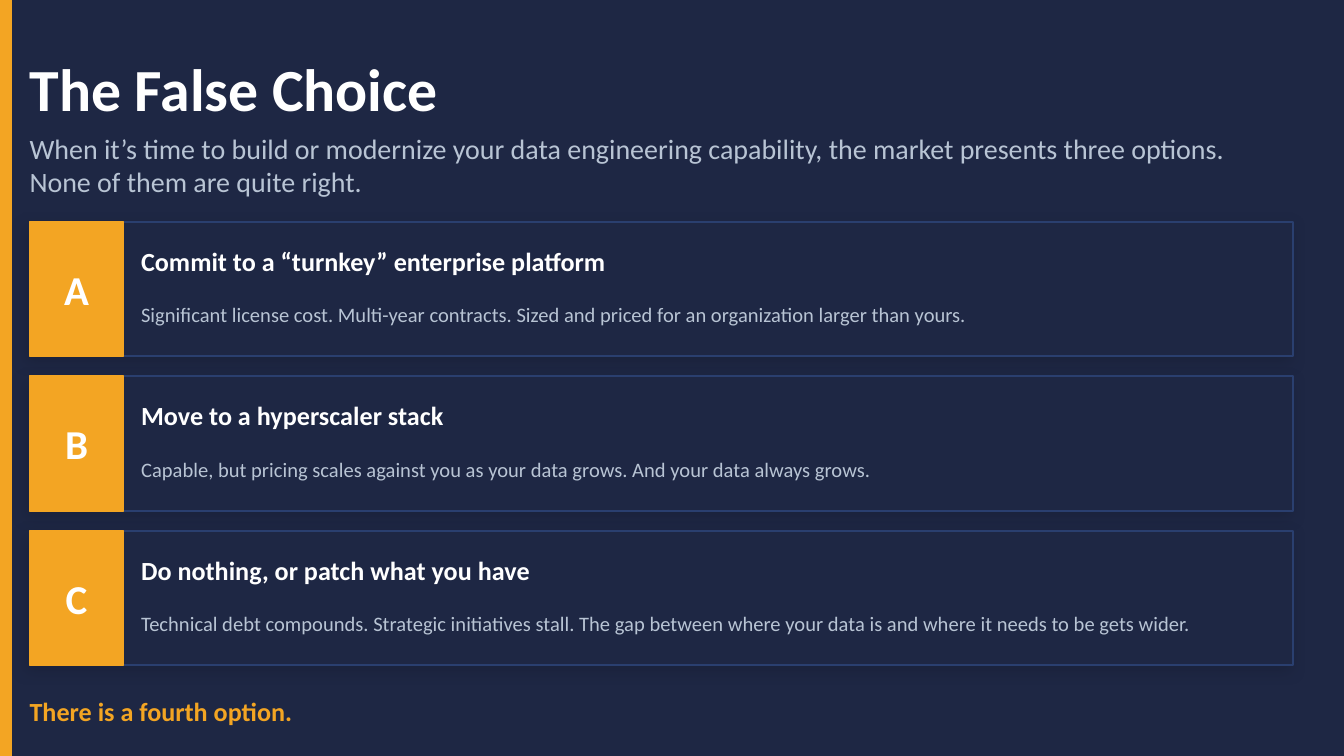
from dataclasses import dataclass

from pptx import Presentation
from pptx.dml.color import RGBColor
from pptx.enum.shapes import MSO_SHAPE
from pptx.enum.text import MSO_ANCHOR, MSO_AUTO_SIZE, PP_ALIGN
from pptx.oxml import parse_xml
from pptx.oxml.ns import nsdecls, qn
from pptx.shapes.autoshape import Shape
from pptx.slide import Slide
from pptx.util import Emu, Pt

RECT = MSO_SHAPE.RECTANGLE
MIDDLE = MSO_ANCHOR.MIDDLE
NO_FIT = MSO_AUTO_SIZE.NONE
LEFT, CENTER = PP_ALIGN.LEFT, PP_ALIGN.CENTER
TITLE_ONLY = 5
EMU_PER_PX = 4572  # 200 px to the inch


@dataclass(frozen=True)
class TextStyle:
    size: int
    color: str
    bold: bool = False


@dataclass(frozen=True)
class Theme:
    font: str = "Calibri"
    navy: str = "1E2744"
    amber: str = "F3A523"
    border: str = "2A3F6F"
    title: TextStyle = TextStyle(32, "FFFFFF", True)
    lede: TextStyle = TextStyle(15, "B8C4D4")
    letter: TextStyle = TextStyle(22, "FFFFFF", True)
    heading: TextStyle = TextStyle(14, "FFFFFF", True)
    detail: TextStyle = TextStyle(11, "B8C4D4")
    closing: TextStyle = TextStyle(14, "F3A523", True)


@dataclass(frozen=True)
class Box:
    left: int
    top: int
    width: int
    height: int

    def emu(self) -> tuple[Emu, ...]:
        return tuple(Emu(px * EMU_PER_PX)
                     for px in (self.left, self.top, self.width, self.height))


@dataclass(frozen=True)
class Option:
    letter: str
    heading: str
    detail: str


THEME = Theme()
SLIDE = Box(0, 0, 2000, 1125)
MARGIN = 44
CARD_TOP, CARD_WIDTH, CARD_HEIGHT, CARD_GAP = 330, 1880, 200, 30
BADGE_WIDTH = 140
TEXT_LEFT, LINE_HEIGHT = 210, 76

OPTIONS = (
    Option("A", "Commit to a “turnkey” enterprise platform",
           "Significant license cost. Multi-year contracts. "
           "Sized and priced for an organization larger than yours."),
    Option("B", "Move to a hyperscaler stack",
           "Capable, but pricing scales against you as your data grows. "
           "And your data always grows."),
    Option("C", "Do nothing, or patch what you have",
           "Technical debt compounds. Strategic initiatives stall. "
           "The gap between where your data is and where it needs to be gets wider."),
)


def write(shape: Shape, text: str, style: TextStyle, align: PP_ALIGN = LEFT) -> None:
    frame = shape.text_frame
    frame.text = text
    frame.word_wrap = True
    frame.auto_size = NO_FIT
    frame.vertical_anchor = MIDDLE
    frame.margin_left = frame.margin_top = frame.margin_right = frame.margin_bottom = 0
    paragraph = frame.paragraphs[0]
    paragraph.alignment = align
    font = paragraph.runs[0].font
    font.name = THEME.font
    font.size = Pt(style.size)
    font.bold = style.bold
    font.color.rgb = RGBColor.from_string(style.color)


def add_text(slide: Slide, box: Box, text: str, style: TextStyle) -> None:
    write(slide.shapes.add_textbox(*box.emu()), text, style)


def add_rect(slide: Slide, box: Box, fill: str, line: str) -> Shape:
    rect = slide.shapes.add_shape(RECT, *box.emu())
    rect.shadow.inherit = False
    rect.fill.solid()
    rect.fill.fore_color.rgb = RGBColor.from_string(fill)
    rect.line.color.rgb = RGBColor.from_string(line)
    rect.line.width = Pt(1)
    return rect


def add_soft_shadow(shape: Shape) -> None:
    effects = shape.element.spPr.find(qn("a:effectLst"))
    effects.append(parse_xml(
        f'<a:outerShdw {nsdecls("a")} blurRad="{Pt(8)}" dist="{Pt(3)}" '
        f'dir="{135 * 60000}" algn="bl" rotWithShape="0">'
        '<a:srgbClr val="000000"><a:alpha val="12000"/></a:srgbClr></a:outerShdw>'))


def add_option(slide: Slide, option: Option, top: int) -> None:
    card = add_rect(slide, Box(MARGIN, top, CARD_WIDTH, CARD_HEIGHT),
                    THEME.navy, THEME.border)
    add_soft_shadow(card)
    badge = add_rect(slide, Box(MARGIN, top, BADGE_WIDTH, CARD_HEIGHT),
                     THEME.amber, THEME.amber)
    write(badge, option.letter, THEME.letter, CENTER)
    add_text(slide, Box(TEXT_LEFT, top + 20, 1500, LINE_HEIGHT),
             option.heading, THEME.heading)
    add_text(slide, Box(TEXT_LEFT, top + 100, 1640, LINE_HEIGHT),
             option.detail, THEME.detail)


def main() -> None:
    deck = Presentation()
    _, _, deck.slide_width, deck.slide_height = SLIDE.emu()
    slide = deck.slides.add_slide(deck.slide_layouts[TITLE_ONLY])
    slide.background.fill.solid()
    slide.background.fill.fore_color.rgb = RGBColor.from_string(THEME.navy)

    add_rect(slide, Box(0, 0, 16, SLIDE.height), THEME.amber, THEME.amber)

    title = slide.shapes.title
    title.left, title.top, title.width, title.height = Box(MARGIN, 60, 1800, 140).emu()
    write(title, "The False Choice", THEME.title)
    add_text(slide, Box(MARGIN, 200, 1800, 90),
             "When it’s time to build or modernize your data engineering capability, "
             "the market presents three options. None of them are quite right.",
             THEME.lede)

    for row, option in enumerate(OPTIONS):
        add_option(slide, option, CARD_TOP + row * (CARD_HEIGHT + CARD_GAP))

    add_text(slide, Box(MARGIN, 1020, CARD_WIDTH, LINE_HEIGHT),
             "There is a fourth option.", THEME.closing)
    deck.save("out.pptx")


if __name__ == "__main__":
    main()
